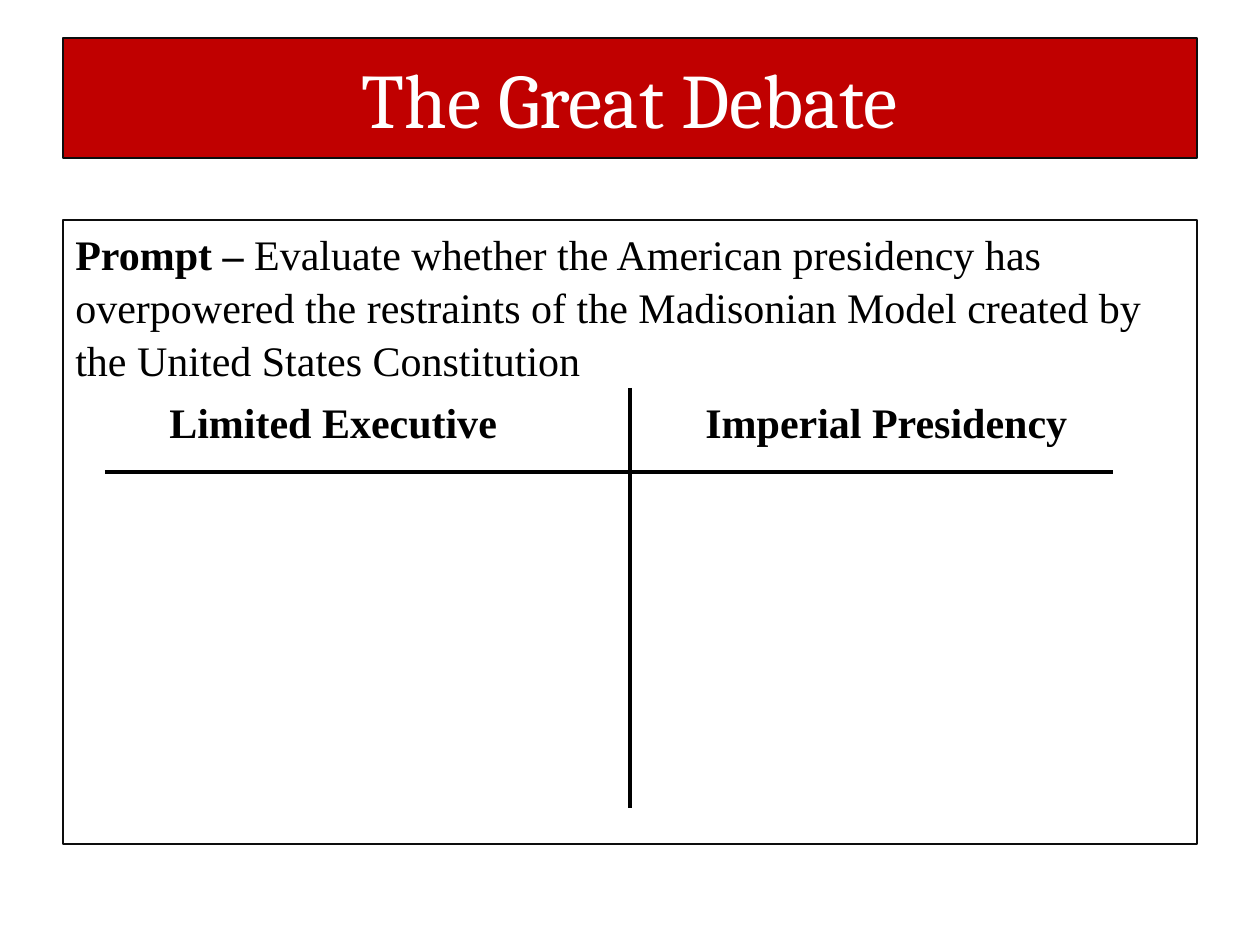
from dataclasses import dataclass

from pptx import Presentation
from pptx.dml.color import RGBColor
from pptx.enum.shapes import MSO_CONNECTOR, MSO_SHAPE
from pptx.enum.text import MSO_ANCHOR, PP_ALIGN
from pptx.oxml.ns import qn
from pptx.util import Emu, Pt
from lxml.etree import SubElement

EMU_PER_PX = 914400 / 126
COLORS = {"red": "C00000", "white": "FFFFFF", "black": "000000", "border": "0D0D0D"}


@dataclass
class Rule:
    x1: int
    y1: int
    x2: int
    y2: int


@dataclass
class Span:
    text: str
    bold: bool = False


RULES = [Rule(105, 472, 1113, 472), Rule(630, 388, 630, 808)]
PROMPT = [
    Span("Prompt –", bold=True),
    Span(
        " Evaluate whether the American presidency has overpowered the restraints "
        "of the Madisonian Model created by the United States Constitution"
    ),
]
HEADINGS = [Span("\tLimited Executive\tImperial Presidency", bold=True)]
HEADING_TABS = [94, 630]


def px(value: int) -> Emu:
    return Emu(round(value * EMU_PER_PX))


def color(name: str) -> RGBColor:
    return RGBColor.from_string(COLORS[name])


def style_panel(shape, fill: str) -> None:
    shape.fill.solid()
    shape.fill.fore_color.rgb = color(fill)
    shape.line.color.rgb = color("border")
    shape.line.width = Pt(0.75)


def add_span(para, span: Span, font: str, size: int, ink: str) -> None:
    run = para.add_run()
    run.text = span.text
    run.font.name = font
    run.font.size = Pt(size)
    run.font.bold = span.bold
    run.font.color.rgb = color(ink)


def fill_para(para, spans: list[Span]) -> None:
    para.alignment = PP_ALIGN.LEFT
    para.line_spacing = 1.05
    for span in spans:
        add_span(para, span, "Times New Roman", 24, "black")


def add_tabs(para, stops: list[int]) -> None:
    tab_list = SubElement(para._p.get_or_add_pPr(), qn("a:tabLst"))
    for stop in stops:
        SubElement(tab_list, qn("a:tab"), pos=str(px(stop)), algn="l")


def add_rule(page, rule: Rule) -> None:
    line = page.shapes.add_connector(
        MSO_CONNECTOR.STRAIGHT, px(rule.x1), px(rule.y1), px(rule.x2), px(rule.y2)
    )
    line.line.color.rgb = color("black")
    line.line.width = Pt(2.25)
    SubElement(line._element.spPr, qn("a:effectLst"))


def main() -> None:
    deck = Presentation()
    deck.slide_width, deck.slide_height = px(1260), px(945)
    page = deck.slides.add_slide(deck.slide_layouts[5])

    # Title banner
    title = page.shapes.title
    title.left, title.top, title.width, title.height = px(63), px(38), px(1134), px(120)
    style_panel(title, "red")
    title.text_frame.vertical_anchor = MSO_ANCHOR.MIDDLE
    heading = title.text_frame.paragraphs[0]
    heading.alignment = PP_ALIGN.CENTER
    add_span(heading, Span("The Great Debate"), "Cambria", 44, "white")

    # Prompt and column headings
    box = page.shapes.add_shape(MSO_SHAPE.RECTANGLE, px(63), px(220), px(1134), px(624))
    box.shadow.inherit = False
    style_panel(box, "white")
    frame = box.text_frame
    frame.word_wrap = True
    frame.vertical_anchor = MSO_ANCHOR.TOP
    fill_para(frame.paragraphs[0], PROMPT)
    columns = frame.add_paragraph()
    columns.space_before = Pt(5)
    fill_para(columns, HEADINGS)
    add_tabs(columns, HEADING_TABS)

    # T-chart lines
    for rule in RULES:
        add_rule(page, rule)

    deck.save("out.pptx")


if __name__ == "__main__":
    main()
